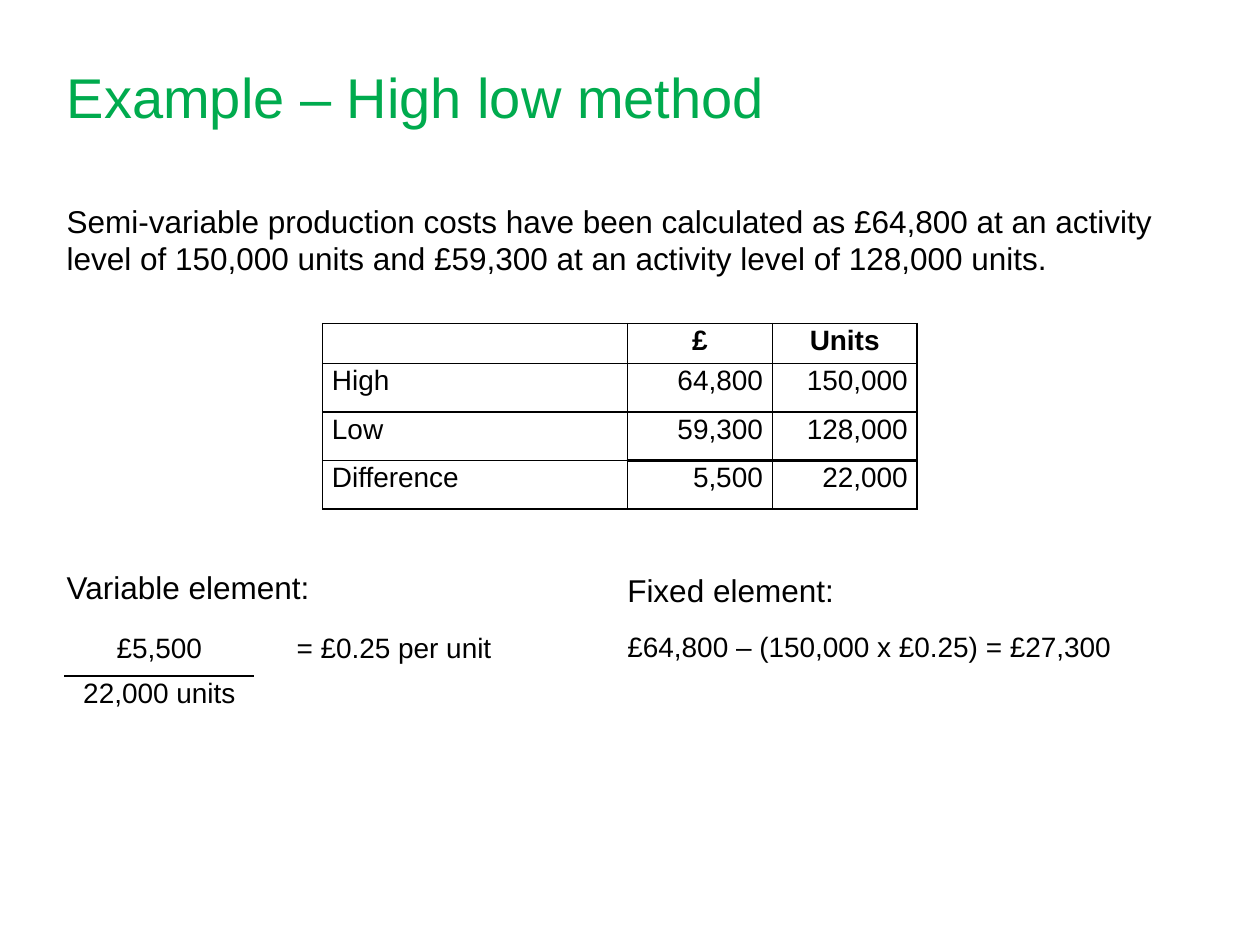
import pptx
import pptx.util
import pptx.dml.color
import pptx.enum.text
import pptx.oxml
import pptx.oxml.ns

Pt = pptx.util.Pt
ALIGN = pptx.enum.text.PP_ALIGN
L, C, R = ALIGN.LEFT, ALIGN.CENTER, ALIGN.RIGHT
GREEN = pptx.dml.color.RGBColor(0x00, 0xAB, 0x4E)
BLACK = pptx.dml.color.RGBColor(0, 0, 0)
NO_STYLE = "{2D5ABB26-0587-4C30-8999-92F81FD0307C}"

# Content
TITLE = "Example – High low method"
LEFT, RIGHT = 31, 351.4
# text, left, top, width, height, size, line spacing, space after
TEXTS = [
    ("Semi-variable production costs have been calculated as £64,800 at an "
     "activity level of 150,000 units and £59,300 at an activity level of "
     "128,000 units.", LEFT, 111.6, 652.3, 51, 18, 1, 0),
    ("Variable element:", LEFT, 321.1, 266.4, 29, 18, 1, 0),
    ("Fixed element:", RIGHT, 321.1, 254.9, 29, 18, 1.07, 8),
    ("£64,800 – (150,000 x £0.25) = £27,300",
     RIGHT, 356.4, 331.9, 26.6, 16, 1, 0),
]
COSTS = [
    ("", "£", "Units"),
    ("High", "64,800", "150,000"),
    ("Low", "59,300", "128,000"),
    ("Difference", "5,500", "22,000"),
]
FRACTION = [
    ("£5,500", "", "= £0.25 per unit"),
    ("22,000 units", "", ""),
]


def format_paragraph(p, size, color=BLACK, bold=False):
    p.font.name = "Arial"
    p.font.size = Pt(size)
    p.font.bold = bold
    p.font.color.rgb = color


def add_borders(cell, widths):
    """Draw black borders; widths maps a side (L, R, T, B) to points."""
    tc_pr = cell._tc.get_or_add_tcPr()
    for side in "LRTB":
        if side in widths:
            tc_pr.append(pptx.oxml.parse_xml(
                f'<a:ln{side} {pptx.oxml.ns.nsdecls("a")} w="{Pt(widths[side])}">'
                f'<a:solidFill><a:srgbClr val="{BLACK}"/></a:solidFill>'
                f'</a:ln{side}>'))


def add_grid(s, rows, left, top, widths, heights, align, borders):
    """Add a plain table; align and borders are functions of row and column."""
    frame = s.shapes.add_table(len(rows), len(widths), Pt(left), Pt(top),
                               Pt(sum(widths)), Pt(sum(heights)))
    table = frame.table
    table.first_row = table.horz_banding = False
    table._tbl.tblPr.find(pptx.oxml.ns.qn("a:tableStyleId")).text = NO_STYLE
    for column, width in zip(table.columns, widths):
        column.width = Pt(width)
    for i, row in enumerate(rows):
        table.rows[i].height = Pt(heights[i])
        for j, text in enumerate(row):
            cell = table.cell(i, j)
            cell.margin_left = cell.margin_right = Pt(5.4)
            cell.margin_top = cell.margin_bottom = 0
            add_borders(cell, borders(i, j))
            cell.fill.background()
            p = cell.text_frame.paragraphs[0]
            p.text = text
            p.alignment = align(i, j)
            p.line_spacing = 1.07
            format_paragraph(p, 16, bold=text in COSTS[0])


def cost_borders(i, j):
    # Rules under the Low and Difference figures are heavier
    return {"L": 1, "R": 1,
            "T": 1.5 if i == 3 and j else 1,
            "B": 1.5 if i >= 2 and j else 1}


def fraction_borders(i, j):
    return {"TB"[1 - i]: 1} if j == 0 else {}


prs = pptx.Presentation()
prs.slide_width, prs.slide_height = Pt(720), Pt(540)
s = prs.slides.add_slide(prs.slide_layouts[5])

# Title
title = s.shapes.title
title.left, title.top, title.width, title.height = map(Pt, (LEFT, 9.4, 657.4, 90.7))
title.text_frame.vertical_anchor = pptx.enum.text.MSO_ANCHOR.MIDDLE
p = title.text_frame.paragraphs[0]
p.text = TITLE
p.alignment = L
format_paragraph(p, 32, GREEN)

# Text
for text, left, top, width, height, size, spacing, after in TEXTS:
    tf = s.shapes.add_textbox(Pt(left), Pt(top), Pt(width), Pt(height)).text_frame
    tf.word_wrap = True
    tf.auto_size = pptx.enum.text.MSO_AUTO_SIZE.SHAPE_TO_FIT_TEXT
    p = tf.paragraphs[0]
    p.text = text
    p.line_spacing = spacing
    p.space_after = Pt(after)
    format_paragraph(p, size)

# Cost table and the variable element fraction
add_grid(s, COSTS, 184.3, 184.9, [174.2, 82.8, 82.8], [22.8] + [27.7] * 3,
         lambda i, j: L if j == 0 else C if i == 0 else R, cost_borders)
add_grid(s, FRACTION, 36.7, 360.9, [108.7, 18.7, 139], [25.4] * 2,
         lambda i, j: C if j == 0 else L, fraction_borders)

prs.save("out.pptx")
